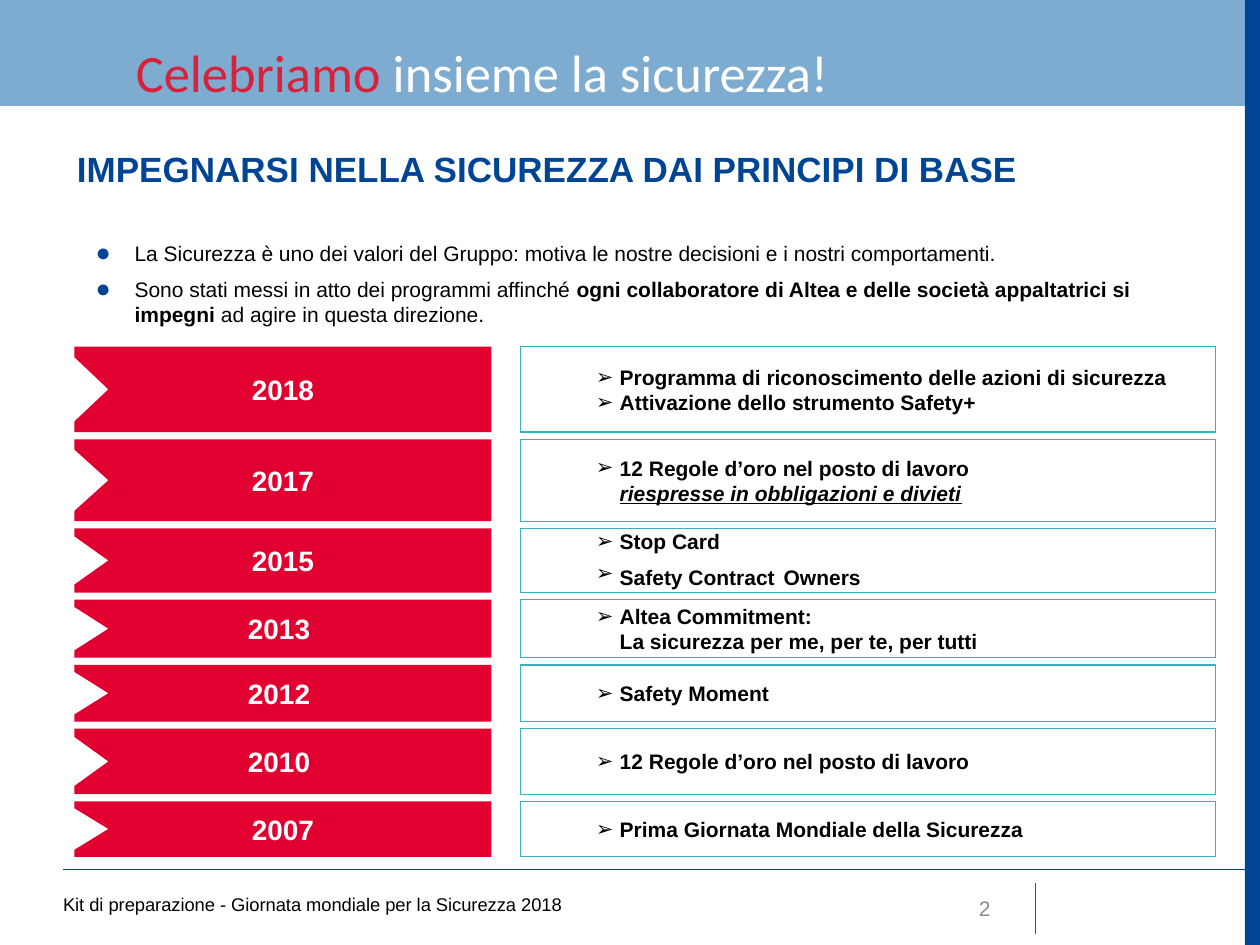
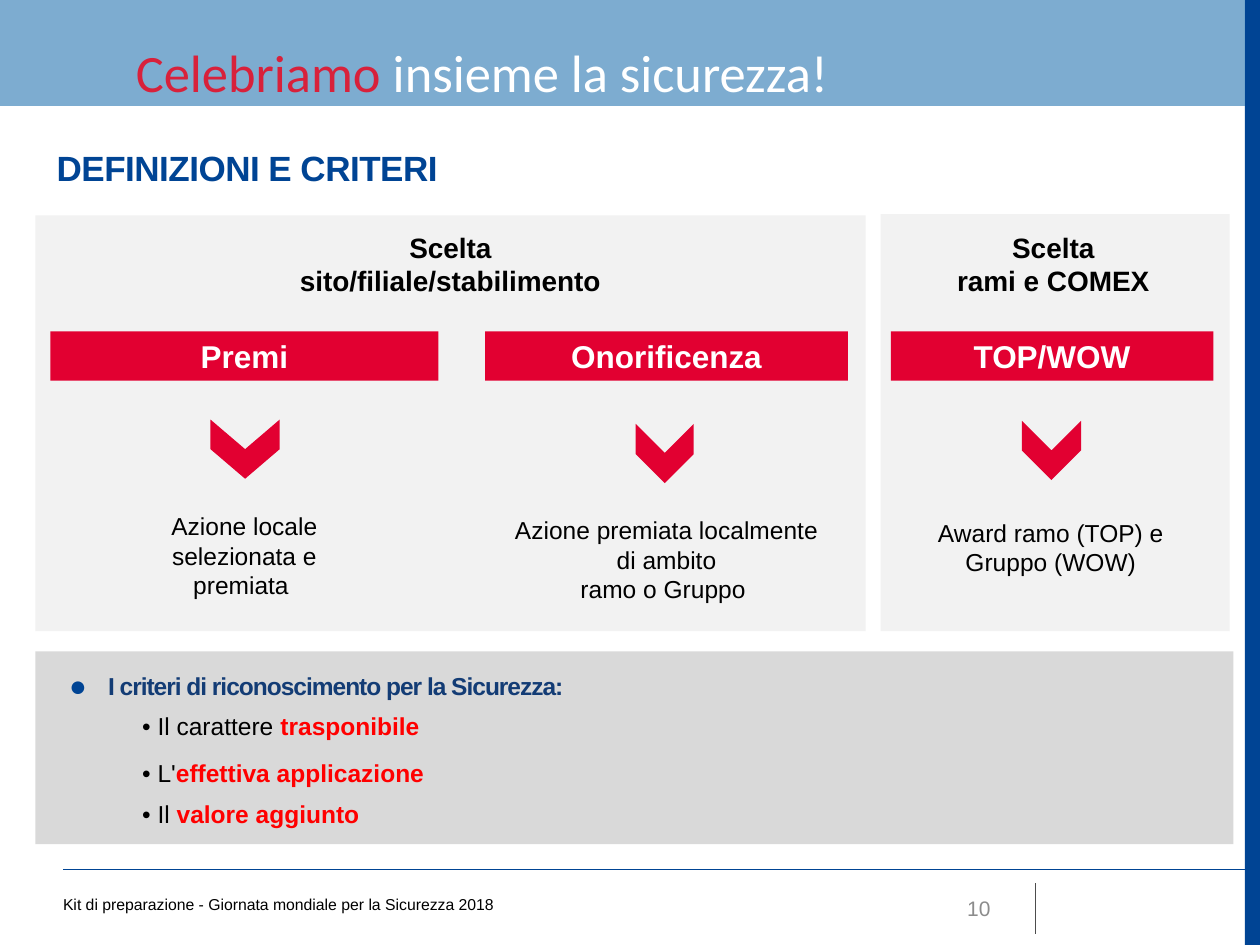
"""Build two slides on safety commitments and award criteria."""
import copy
import dataclasses

import lxml.etree
import pptx
import pptx.dml.color
import pptx.enum.shapes
import pptx.enum.text
import pptx.oxml.ns
import pptx.util


@dataclasses.dataclass(frozen=True)
class Theme:
    navy: str = "004494"
    deep: str = "133C75"
    sky: str = "468ABD"
    teal: str = "3AAFC3"
    red: str = "E20031"
    rose: str = "D8213B"
    alert: str = "FF0000"
    black: str = "000000"
    white: str = "FFFFFF"
    slate: str = "4D4D4D"
    grey: str = "8C8C8C"
    pale: str = "F2F2F2"
    mid: str = "D9D9D9"
    font: str = "Arial"
    brand: str = "Calibri"
    banner: float = 30
    title: float = 20
    label: float = 18
    head: float = 16
    body: float = 14
    small: float = 12


theme = Theme()
qn = pptx.oxml.ns.qn
Inches = pptx.util.Inches
Pt = pptx.util.Pt
Shape = pptx.enum.shapes.MSO_SHAPE
Align = pptx.enum.text.PP_ALIGN
Anchor = pptx.enum.text.MSO_ANCHOR


def write(shape, paras, style, layout=None, marks=None, anchor=Anchor.TOP):
    """Fill a shape with paragraphs of (text, format) runs; the last mark repeats."""
    frame = shape.text_frame
    frame.word_wrap = True
    frame.auto_size = pptx.enum.text.MSO_AUTO_SIZE.NONE
    frame.vertical_anchor = anchor
    for num, runs in enumerate(paras):
        para = frame.add_paragraph() if num else frame.paragraphs[0]
        if marks:
            mark, left, hang = marks[min(num, len(marks) - 1)]
            props = para._p.get_or_add_pPr()
            props.set("marL", str(Inches(left)))
            props.set("indent", str(Inches(-hang)))
            if mark == "●":
                tint = lxml.etree.SubElement(props, qn("a:buClr"))
                lxml.etree.SubElement(tint, qn("a:srgbClr"), val=theme.navy)
                lxml.etree.SubElement(props, qn("a:buSzPct"), val="120000")
            if mark:
                lxml.etree.SubElement(props, qn("a:buFont"), typeface=theme.font)
                lxml.etree.SubElement(props, qn("a:buChar"), char=mark)
        for key, value in (layout or {}).items():
            if num or key != "space_before":
                setattr(para, key, value)
        for text, extra in runs:
            look = {"name": theme.font, "color": theme.black, **style, **extra}
            color, space = look.pop("color"), look.pop("spc", 0)
            look["size"] = Pt(look["size"])
            for part, words in enumerate(text.split("\n")):
                if part:
                    para.add_line_break()
                    para._p[-1].append(copy.deepcopy(run._r.rPr))
                run = para.add_run()
                run.text = words
                for key, value in look.items():
                    setattr(run.font, key, value)
                run.font.color.rgb = pptx.dml.color.RGBColor.from_string(color)
                if space:
                    run._r.rPr.set("spc", str(space))


def paint(shape, fill=None, line=None, turn=0):
    """Give a shape a flat fill, outline and rotation."""
    shape.shadow.inherit = False
    shape.rotation = turn
    for part, color in ((shape.fill, fill), (shape.line.fill, line)):
        if color:
            part.solid()
            part.fore_color.rgb = pptx.dml.color.RGBColor.from_string(color)
        else:
            part.background()
    if line:
        shape.line.width = Pt(0.75)
    return shape


deck = pptx.Presentation()
deck.slide_width, deck.slide_height = Inches(10), Inches(7.5)
bold = {"bold": True}
center = {"alignment": Align.CENTER}
spaced = {"space_before": Pt(3), "space_after": Pt(3)}
disc = ("●", 0.31, 0.31)

pages = [
    ("IMPEGNARSI NELLA SICUREZZA DAI PRINCIPI DI BASE", (0.51, 1.12, 8.43, 0.48), 0, "2", 10.5),
    ("DEFINIZIONI E CRITERI", (0.35, 1.11, 8.78, 0.52), -30, "10", 9),
]
slides = []
for title, box, space, number, size in pages:
    slide = deck.slides.add_slide(deck.slide_layouts[5])
    slides.append(slide)
    for frame, fill in [((9.88, 0, 0.12, 7.5), theme.navy), ((0, 0, 9.88, 0.84), theme.sky)]:
        band = paint(slide.shapes.add_shape(Shape.RECTANGLE, *map(Inches, frame)), fill)
    tint = band._element.spPr.find(qn("a:solidFill"))[0]
    lxml.etree.SubElement(tint, qn("a:alpha"), val="70000")
    for ends, color, width in [
        ((0.5, 6.9, 10, 6.9), theme.navy, 0.75),
        ((8.22, 7.01, 8.22, 7.41), theme.slate, 0.5),
    ]:
        rule = slide.shapes.add_connector(
            pptx.enum.shapes.MSO_CONNECTOR.STRAIGHT, *map(Inches, ends))
        rule.line.fill.solid()
        rule.line.fill.fore_color.rgb = pptx.dml.color.RGBColor.from_string(color)
        rule.line.width = Pt(width)
        lxml.etree.SubElement(rule._element.spPr, qn("a:effectLst"))
        rule._element.remove(rule._element.find(qn("p:style")))

    banner = slide.shapes.add_textbox(*map(Inches, (0.98, 0.16, 8.82, 1.22)))
    write(banner, [[("Celebriamo ", {"color": theme.rose}), ("insieme la sicurezza!", {})]],
          {"size": theme.banner, "name": theme.brand, "color": theme.white},
          {"line_spacing": Pt(43.6)})

    head = slide.shapes.title
    for key, value in zip(("left", "top", "width", "height"), box):
        setattr(head, key, Inches(value))
    write(head, [[(title, {"spc": space})]],
          {"size": theme.title, "color": theme.navy, **bold}, {"alignment": Align.LEFT})

    foot = slide.shapes.add_textbox(*map(Inches, (0.5, 6.98, 6.08, 0.4)))
    foot.text_frame.margin_left = 0
    write(foot, [[("Kit di preparazione - Giornata mondiale per la Sicurezza 2018", {})]],
          {"size": size}, anchor=Anchor.MIDDLE)
    page = slide.shapes.add_textbox(*map(Inches, (7.17, 7.01, 0.79, 0.4)))
    write(page, [[(number, {})]], {"size": theme.small, "color": theme.grey},
          {"alignment": Align.RIGHT}, anchor=Anchor.MIDDLE)

years, awards = slides

intro = years.shapes.add_textbox(*map(Inches, (0.66, 1.86, 8.98, 0.89)))
write(intro, [
    [("La Sicurezza è uno dei valori del Gruppo: motiva le nostre decisioni "
      "e i nostri comportamenti.", {})],
    [("Sono stati messi in atto dei programmi affinché ", {}),
     ("ogni collaboratore di Altea e delle società appaltatrici si impegni ", bold),
     ("ad agire in questa direzione.", {})],
], {"size": theme.small}, spaced, [disc])

steps = [
    ("2018", 0.68, [[("Programma di riconoscimento delle azioni di sicurezza", {})],
                    [("Attivazione dello strumento Safety+", {})]]),
    ("2017", 0.65, [[("12 Regole d’oro nel posto di lavoro \n", {}),
                     ("riespresse in obbligazioni e divieti",
                      {"italic": True, "underline": True})]]),
    ("2015", 0.51, [[("Stop Card", {})],
                    [("Safety Contract", {}), (" ", {"size": theme.label, "bold": False}),
                     ("Owners", {})]]),
    ("2013 ", 0.46, [[("Altea Commitment: \nLa sicurezza per me, per te, per tutti", {})]]),
    ("2012 ", 0.45, [[("Safety Moment", {})]]),
    ("2010 ", 0.52, [[("12 Regole d’oro nel posto di lavoro", {})]]),
    ("2007", 0.44, [[("Prima Giornata Mondiale della Sicurezza", {})]]),
]
top, base, notch = 2.75, 6.8, 0.27
left, right = 0.59, 3.9
gap = (base - top - sum(step[1] for step in steps)) / (len(steps) - 1)
for year, high, items in steps:
    points = [(right, top), (right, top + high), (left, top + high),
              (left, top + 0.875 * high), (left + notch, top + high / 2),
              (left, top + 0.125 * high)]
    form = years.shapes.build_freeform(Inches(left), Inches(top))
    form.add_line_segments([tuple(map(Inches, point)) for point in points])
    bar = paint(form.convert_to_shape(), theme.red)
    write(bar, [[(year, {})]], {"size": theme.head, "color": theme.white, **bold},
          center, anchor=Anchor.MIDDLE)
    card = years.shapes.add_shape(Shape.RECTANGLE, *map(Inches, (4.13, top, 5.52, high)))
    write(paint(card, line=theme.teal), items, {"size": theme.small, **bold},
          {"alignment": Align.LEFT}, [("➢", 0.69, 0.19)], Anchor.MIDDLE)
    top += high + gap

for box, fill in [
    ((6.99, 1.7, 2.77, 3.31), theme.pale),
    ((0.28, 1.71, 6.59, 3.3), theme.pale),
    ((0.28, 5.17, 9.51, 1.53), theme.mid),
]:
    paint(awards.shapes.add_shape(Shape.RECTANGLE, *map(Inches, box)), fill)

for text, box in [
    ("Scelta\nsito/filiale/stabilimento", (1.01, 1.78, 5.13, 0.64)),
    ("Scelta\nrami e COMEX", (6.98, 1.78, 2.76, 0.64)),
]:
    group = awards.shapes.add_textbox(*map(Inches, box))
    write(group, [[(text, {})]], {"size": theme.head, **bold}, center)

for name, start, width, arrow, text, box in [
    ("Premi", 0.4, 3.08, (1.71, 3.29, 0.47, 0.55),
     "Azione locale selezionata e premiata ", (0.99, 4.01, 1.9, 0.84)),
    ("Onorificenza", 3.85, 2.88, (5.04, 3.37, 0.47, 0.46),
     "Azione premiata localmente\ndi ambito\nramo o Gruppo ", (3.85, 4.04, 2.88, 0.87)),
    ("TOP/WOW", 7.07, 2.56, (8.11, 3.34, 0.47, 0.47),
     "Award ramo (TOP) e Gruppo (WOW)", (7.24, 4.06, 2.2, 0.71)),
]:
    plate = awards.shapes.add_shape(Shape.PENTAGON, *map(Inches, (start, 2.63, width, 0.39)))
    plate.adjustments[0] = 0
    write(paint(plate, theme.red), [[(name, {})]],
          {"size": theme.label, "color": theme.white, **bold}, center, anchor=Anchor.MIDDLE)
    paint(awards.shapes.add_shape(Shape.CHEVRON, *map(Inches, arrow)), theme.red, turn=90)
    note = awards.shapes.add_textbox(*map(Inches, box))
    write(note, [[(text, {})]], {"size": theme.body}, {**center, **spaced})

alert = {"color": theme.alert, **bold}
rules = awards.shapes.add_textbox(*map(Inches, (0.45, 5.28, 9.37, 1.1)))
write(rules, [
    [("I criteri di riconoscimento per la Sicurezza:",
      {"color": theme.deep, "spc": -60, **bold})],
    [("• Il carattere ", {}), ("trasponibile", alert)],
    [("• L'", {}), ("effettiva applicazione", alert)],
    [("• Il ", {}), ("valore aggiunto", alert)],
], {"size": theme.body}, spaced, [disc, (None, 0.58, 0)])
for key, value in {"space_before": Pt(6.6), "space_after": Pt(4)}.items():
    setattr(rules.text_frame.paragraphs[2], key, value)

deck.save("out.pptx")
